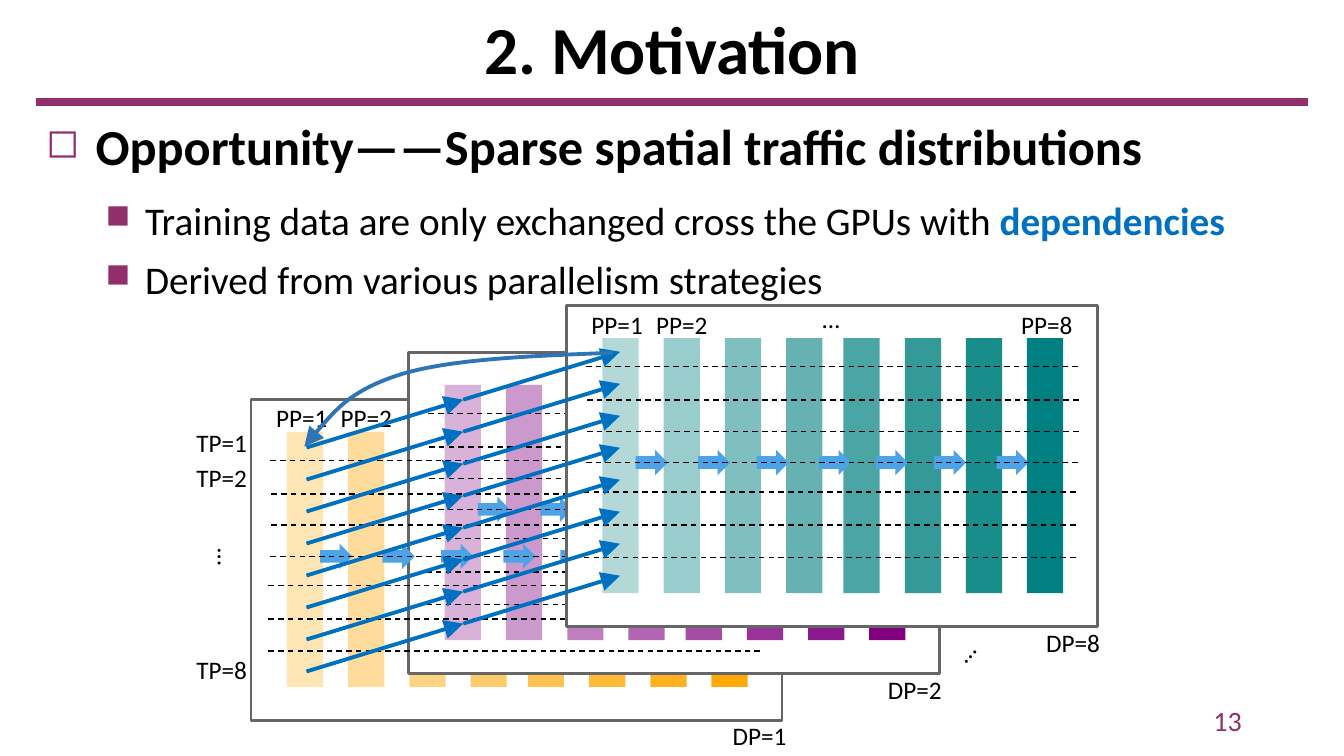
from lxml import etree
from pptx import Presentation
from pptx.dml.color import RGBColor
from pptx.enum.dml import MSO_LINE
from pptx.enum.shapes import MSO_CONNECTOR, MSO_SHAPE
from pptx.enum.text import MSO_ANCHOR, PP_ALIGN
from pptx.oxml.ns import qn
from pptx.util import Pt

DASH = MSO_LINE.DASH
STRAIGHT = MSO_CONNECTOR.STRAIGHT
RECTANGLE, RIGHT_ARROW = MSO_SHAPE.RECTANGLE, MSO_SHAPE.RIGHT_ARROW
TOP, MIDDLE = MSO_ANCHOR.TOP, MSO_ANCHOR.MIDDLE
LEFT, CENTER, RIGHT = PP_ALIGN.LEFT, PP_ALIGN.CENTER, PP_ALIGN.RIGHT

COLORS = {
    "black": "000000", "white": "FFFFFF", "plum": "912F6C", "frame": "666666",
    "blue": "0070C0", "curve": "2E75B6", "arrow": "4EA2E6",
    "orange": "FFA907", "purple": "800080", "teal": "008080",
}
FONT = "Calibri"

TITLE = "2. Motivation"
PAGE_NUMBER = "13"
BULLETS = [
    {"spans": [("Opportunity——Sparse spatial traffic distributions", "black", True)],
     "mark": "◻", "scale": 80, "size": 36, "margin": 35.3, "hang": 35.3,
     "before": 10, "after": 12},
    {"spans": [("Training data are only exchanged cross the GPUs with ", "black", False),
               ("dependencies", "blue", True)],
     "mark": "■", "scale": 85, "size": 28, "margin": 70.6, "hang": 28.1,
     "before": 6, "after": 6},
    {"spans": [("Derived from various parallelism strategies", "black", False)],
     "mark": "■", "scale": 85, "size": 28, "margin": 70.6, "hang": 28.1,
     "before": 6, "after": 6},
]
BACK_LABELS = [
    ("PP=1", 190.1, 283.7, 0), ("PP=2", 236.2, 283.7, 0),
    ("TP=1", 133.2, 301.7, 0), ("TP=2", 133.2, 326.9, 0), ("TP=8", 133.2, 463.7, 0),
    ("DP=1", 516.2, 511.2, 0), ("DP=2", 627.1, 478.1, 0), ("DP=8", 740.2, 444.2, 0),
    ("…", 675.4, 450.7, 311.8), ("…", 149, 383.8, 90),
]
FRONT_LABELS = [
    ("PP=1", 415.4, 217.4, 0), ("PP=2", 461.5, 217.4, 0),
    ("PP=8", 722.2, 217.4, 0), ("…", 580.3, 213.1, 0),
]

SHEET_LEFT, SHEET_TOP = 179.3, 285.1
SHEET_WIDTH, SHEET_HEIGHT = 379.4, 229.7
SHEET_STEP_X, SHEET_STEP_Y = 112.7, -33.5
SHEET_COLORS = ["orange", "purple", "teal"]
ARROW_COUNTS = [5, 2, 7]
BAR_OFFSETS = [25.6, 69.4, 113.2, 156.8, 197.7, 241.6, 285.3, 328.9]
ARROW_OFFSETS = [49.3, 93.9, 135.7, 180.3, 220.9, 262.4, 307.1]
DASH_OFFSETS = [(13, 43.9), (13.7, 67.7), (13.7, 90), (13, 112.3),
                (11.5, 133.2), (11.5, 157), (11.5, 180)]
DASH_LENGTH = 352.1
FLOW_LEFT, FLOW_TOP, FLOW_ROWS, FLOW_PITCH = 218.9, 319.7, 8, 22.85
FLOW_STEP_X, FLOW_STEP_Y = 112, -34.2
RETURN_CURVE = [(437.8, 252), (380.9, 254.2), (324, 256.3), (287.3, 267.1),
                (250.6, 278.6), (234, 298.8), (217.4, 319)]

deck = Presentation()
deck.slide_width, deck.slide_height = Pt(960), Pt(540)
page = deck.slides.add_slide(deck.slide_layouts[6])


def rgb(name):
    return RGBColor.from_string(COLORS[name])


def add_block(kind, left, top, width, height, fill, opacity=100):
    shape = page.shapes.add_shape(kind, Pt(left), Pt(top), Pt(width), Pt(height))
    shape.shadow.inherit = False
    shape.fill.solid()
    shape.fill.fore_color.rgb = rgb(fill)
    shape.line.fill.background()
    if opacity < 100:
        color = shape._element.spPr.find(qn("a:solidFill"))[0]
        etree.SubElement(color, qn("a:alpha")).set("val", str(opacity * 1000))
    return shape


def add_arrowhead(shape):
    head = etree.SubElement(shape.line._get_or_add_ln(), qn("a:tailEnd"))
    for name, value in (("type", "triangle"), ("w", "lg"), ("len", "lg")):
        head.set(name, value)


def add_line(x1, y1, x2, y2, color, width):
    line = page.shapes.add_connector(STRAIGHT, Pt(x1), Pt(y1), Pt(x2), Pt(y2))
    line.line.color.rgb = rgb(color)
    line.line.width = Pt(width)
    etree.SubElement(line._element.spPr, qn("a:effectLst"))
    return line


def add_box(left, top, width, height, anchor=TOP):
    box = page.shapes.add_textbox(Pt(left), Pt(top), Pt(width), Pt(height))
    box.text_frame.word_wrap = True
    box.text_frame.vertical_anchor = anchor
    return box


def style(font, size, color, bold=False):
    font.name, font.size, font.bold = FONT, Pt(size), bold
    font.color.rgb = rgb(color)


def write(box, text, size, color, align=LEFT, bold=False):
    para = box.text_frame.paragraphs[0]
    para.text = text
    para.alignment = align
    style(para.font, size, color, bold)


def add_labels(labels):
    for text, left, top, angle in labels:
        box = add_box(left, top, 27.4 if text == "…" else 60, 29)
        box.rotation = angle
        write(box, text, 18, "black")


def add_bullets():
    frame = add_box(25.9, 83.5, 908.6, 437).text_frame
    for index, item in enumerate(BULLETS):
        para = frame.add_paragraph() if index else frame.paragraphs[0]
        para.line_spacing = 0.9
        para.space_before, para.space_after = Pt(item["before"]), Pt(item["after"])
        props = para._p.get_or_add_pPr()
        props.set("marL", str(Pt(item["margin"])))
        props.set("indent", str(-Pt(item["hang"])))
        mark_color = etree.SubElement(props, qn("a:buClr"))
        etree.SubElement(mark_color, qn("a:srgbClr")).set("val", COLORS["plum"])
        etree.SubElement(props, qn("a:buSzPct")).set("val", str(item["scale"] * 1000))
        etree.SubElement(props, qn("a:buChar")).set("char", item["mark"])
        _, color, bold = item["spans"][0]
        style(para.font, item["size"], color, bold)
        for text, span_color, span_bold in item["spans"]:
            span = para.add_run()
            span.text = text
            if (span_color, span_bold) != (color, bold):
                style(span.font, item["size"], span_color, span_bold)


def sheet_corner(sheet):
    return SHEET_LEFT + sheet * SHEET_STEP_X, SHEET_TOP + sheet * SHEET_STEP_Y


def add_sheet(sheet):
    left, top = sheet_corner(sheet)
    panel = add_block(RECTANGLE, left, top, SHEET_WIDTH, SHEET_HEIGHT, "white")
    panel.line.color.rgb = rgb("frame")
    panel.line.width = Pt(2)
    for index, offset in enumerate(BAR_OFFSETS):
        add_block(RECTANGLE, left + offset, top + 23.4, 25.9, 182.2,
                  SHEET_COLORS[sheet], 30 + 10 * index)


def add_sheet_details(sheet):
    left, top = sheet_corner(sheet)
    for offset in ARROW_OFFSETS[:ARROW_COUNTS[sheet]]:
        add_block(RIGHT_ARROW, left + offset, top + 103.3, 23, 18, "arrow")
    for x, y in DASH_OFFSETS:
        line = add_line(left + x + DASH_LENGTH, top + y, left + x, top + y, "black", 1)
        line.line.dash_style = DASH


def add_flows():
    for step in range(2):
        x = FLOW_LEFT + step * FLOW_STEP_X
        for row in range(FLOW_ROWS):
            y = FLOW_TOP + step * FLOW_STEP_Y + row * FLOW_PITCH
            add_arrowhead(add_line(x, y, x + FLOW_STEP_X, y + FLOW_STEP_Y, "blue", 2.75))


def add_return_curve():
    points = [(Pt(x), Pt(y)) for x, y in RETURN_CURVE]
    builder = page.shapes.build_freeform(*points[0])
    builder.add_line_segments(points[1:], close=False)
    curve = builder.convert_to_shape()
    curve.shadow.inherit = False
    curve.fill.background()
    curve.line.color.rgb = rgb("curve")
    curve.line.width = Pt(2.75)
    add_arrowhead(curve)
    segments = list(curve._element.iter(qn("a:lnTo")))
    outline = segments[0].getparent()
    for start in range(0, len(segments), 3):
        bezier = etree.SubElement(outline, qn("a:cubicBezTo"))
        for segment in segments[start:start + 3]:
            bezier.append(segment[0])
            outline.remove(segment)


add_line(25.9, 72.7, 934.6, 72.7, "plum", 6)
add_bullets()
write(add_box(678.2, 500.4, 216, 28.8, MIDDLE), PAGE_NUMBER, 20, "plum", RIGHT)
write(add_box(66.2, 0, 828, 68.4, MIDDLE), TITLE, 48, "black", CENTER, True)
add_sheet(0)
add_sheet(1)
add_sheet_details(1)
add_sheet_details(0)
add_labels(BACK_LABELS)
add_sheet(2)
add_sheet_details(2)
add_flows()
add_labels(FRONT_LABELS)
add_return_curve()
deck.save("out.pptx")
